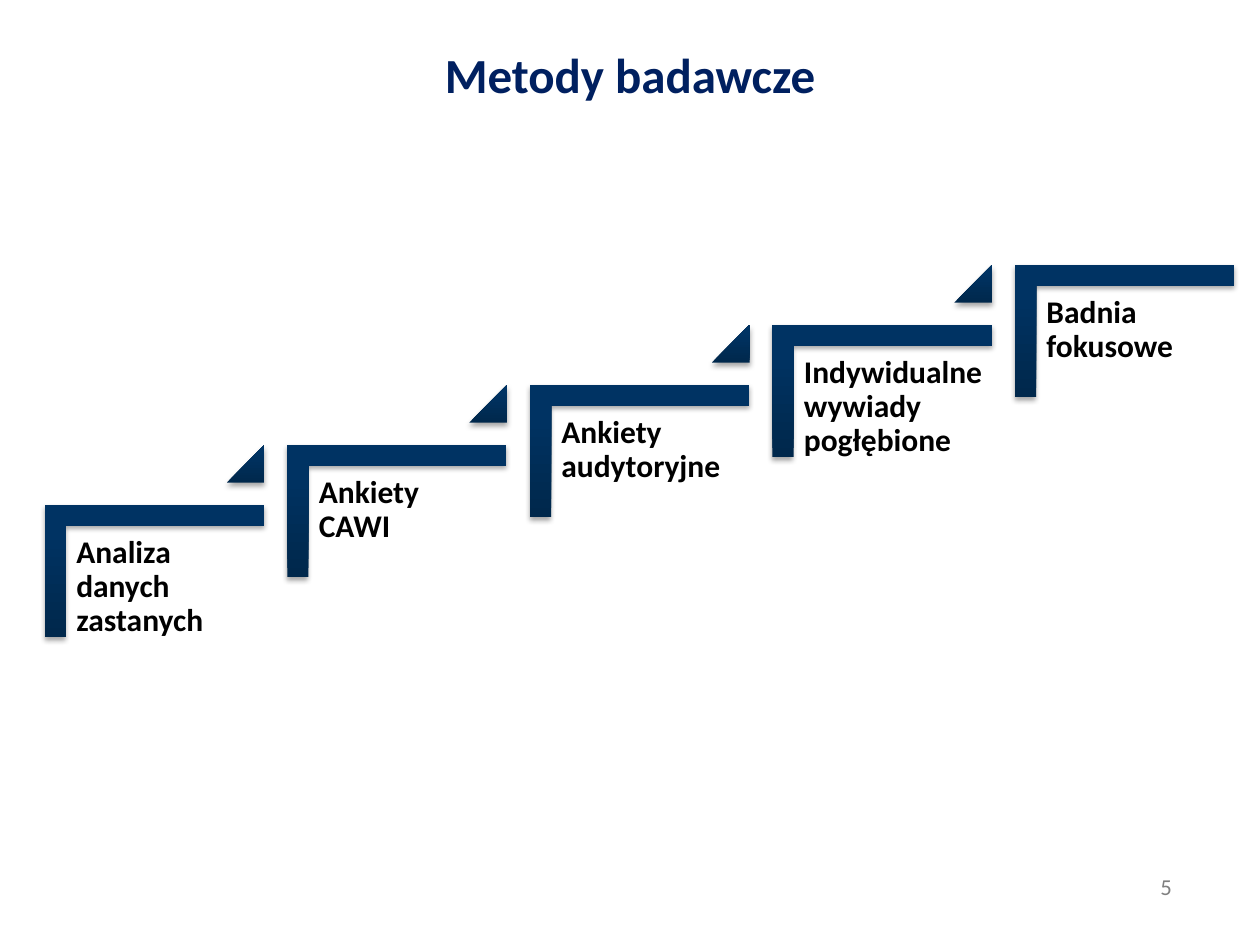
"""Build the slide of research methods shown as rising steps."""
from dataclasses import dataclass

from pptx import Presentation
from pptx import util as u
from pptx.dml.color import RGBColor
from pptx.enum import shapes, text
from pptx.oxml import parse_xml
from pptx.oxml.ns import nsdecls

HUES = {"title": "002060", "text": "000000", "page": "808080",
        "dark": "00284C", "mid": "003363", "light": "003463", "shade": "000000"}
STOPS = {"dark": 0, "mid": 80, "light": 100}
RISE = u.Pt(34.3)
RUN = u.Pt(138.6)


@dataclass
class Box:
    left: float
    top: float
    width: float
    height: float

    def place(self, step: int = 0) -> tuple:
        return (u.Pt(self.left) + step * RUN, u.Pt(self.top) - step * RISE,
                u.Pt(self.width), u.Pt(self.height))


@dataclass
class Step:
    rank: int
    label: str
    last: bool


NAMES = ["Analiza danych zastanych", "Ankiety CAWI", "Ankiety audytoryjne",
         "Indywidualne wywiady pogłębione", "Badnia fokusowe"]
STEPS = [Step(i, name, i == len(NAMES) - 1) for i, name in enumerate(NAMES)]
CORNER = Box(50.4, 263.5, 75.6, 125.3)
LABEL = Box(38.2, 301, 113, 99.4)
WEDGE = Box(129.6, 254.2, 21.6, 21.6)
TITLE = Box(36, 21.6, 648, 67)
PAGE = Box(637.9, 495.4, 56.9, 23)


def apply(item, form: dict) -> None:
    """Set each format value on the item."""
    for key, value in form.items():
        setattr(item, key, value)


def write(shape, words: str, hue: str, font: dict, para: dict, frame: dict) -> None:
    """Put one formatted paragraph into the shape."""
    body = shape.text_frame
    apply(body, {"word_wrap": True, "auto_size": text.MSO_AUTO_SIZE.NONE,
                 "vertical_anchor": text.MSO_ANCHOR.TOP} | frame)
    line = body.paragraphs[0]
    line.text = words
    apply(line, para)
    apply(line.font, {"name": "Calibri"} | font)
    line.font.color.rgb = RGBColor.from_string(HUES[hue])


def paint(shape) -> None:
    """Give the shape its upright gradient and soft shadow."""
    stops = "".join(f'<a:gs pos="{pos * 1000}"><a:srgbClr val="{HUES[hue]}"/></a:gs>'
                    for hue, pos in STOPS.items())
    shape.line.fill.background()
    props = shape.element.spPr
    props.insert(2, parse_xml(
        f'<a:gradFill {nsdecls("a")} rotWithShape="0"><a:gsLst>{stops}</a:gsLst>'
        '<a:lin ang="16200000" scaled="0"/></a:gradFill>'))
    props.append(parse_xml(
        f'<a:effectLst {nsdecls("a")}><a:outerShdw blurRad="{u.Pt(3.1)}" '
        f'dist="{u.Pt(1.8)}" dir="5400000" rotWithShape="0">'
        f'<a:srgbClr val="{HUES["shade"]}"><a:alpha val="35000"/></a:srgbClr>'
        '</a:outerShdw></a:effectLst>'))


def draw(group, step: Step) -> None:
    """Draw one step with its label and the wedge to the next."""
    kind = shapes.MSO_SHAPE
    bar = group.shapes.add_shape(kind.CORNER, *CORNER.place(step.rank))
    bar.rotation = 90
    for i in range(2):
        bar.adjustments[i] = 0.16
    paint(bar)
    label = group.shapes.add_textbox(*LABEL.place(step.rank))
    sides = ("left", "top", "right", "bottom")
    write(label, step.label, "text", {"size": u.Pt(18), "bold": True},
          {"line_spacing": 0.9, "space_after": u.Pt(6.3)},
          {f"margin_{side}": u.Pt(5.4) for side in sides})
    if not step.last:
        wedge = group.shapes.add_shape(kind.ISOSCELES_TRIANGLE, *WEDGE.place(step.rank))
        wedge.adjustments[0] = 1
        paint(wedge)


def main() -> None:
    """Build and save the slide."""
    deck = Presentation()
    apply(deck, {"slide_width": u.Pt(720), "slide_height": u.Pt(540)})
    slide = deck.slides.add_slide(deck.slide_layouts[5])
    mid = {"alignment": text.PP_ALIGN.CENTER}
    page = slide.shapes.add_textbox(*PAGE.place())
    write(page, "5", "page", {"size": u.Pt(13)}, mid, {})
    group = slide.shapes.add_group_shape()
    for step in STEPS:
        draw(group, step)
    title = slide.shapes.title
    apply(title, dict(zip(("left", "top", "width", "height"), TITLE.place())))
    write(title, "Metody badawcze", "title", {"size": u.Pt(28), "bold": True}, mid, {})
    deck.save("out.pptx")


if __name__ == "__main__":
    main()
